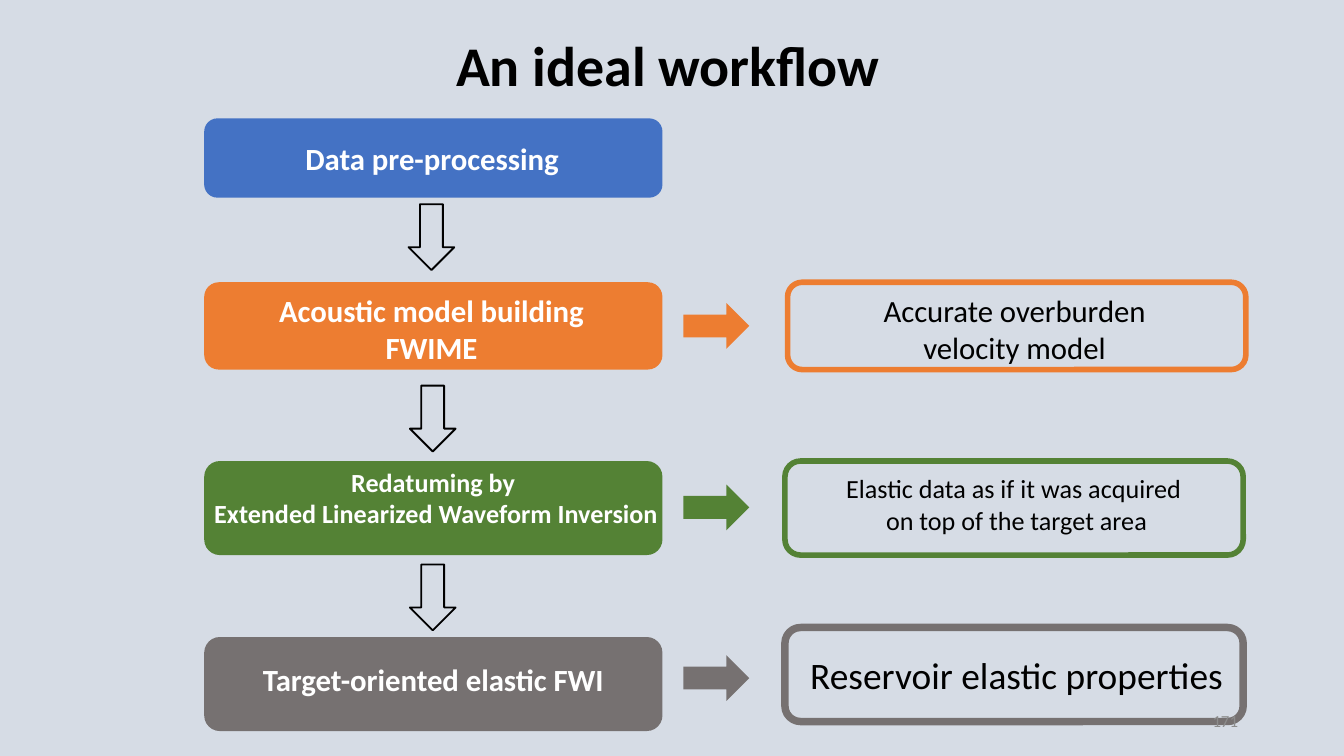
from pptx import Presentation
from pptx.dml.color import RGBColor
from pptx.enum import shapes, text
from pptx.util import Pt

BACKGROUND = RGBColor(0xD6, 0xDC, 0xE5)
BLACK = RGBColor(0, 0, 0)
WHITE = RGBColor(0xFF, 0xFF, 0xFF)
BLUE = RGBColor(0x44, 0x72, 0xC4)
ORANGE = RGBColor(0xED, 0x7D, 0x31)
GREEN = RGBColor(0x54, 0x82, 0x35)
GRAY = RGBColor(0x76, 0x71, 0x71)
NUMBER_GRAY = RGBColor(0x8C, 0x8C, 0x8C)

BOX_WIDTH = 245.5
STAGE_LEFT = 109.4
SIDE_ARROW_LEFT = 371.5
ARROW_WIDTH, ARROW_HEIGHT = 24.5, 35.3


class WorkflowSlide:
    font = "Calibri"

    def __init__(self, slide):
        self.slide = slide
        fill = slide.background.fill
        fill.solid()
        fill.fore_color.rgb = BACKGROUND

    def shape(self, kind, left, top, width, height, fill=None, line=None, weight=1):
        """Add a preset shape; a missing fill or line colour leaves that part empty."""
        shape = self.slide.shapes.add_shape(
            kind, Pt(left), Pt(top), Pt(width), Pt(height))
        shape.shadow.inherit = False
        if fill is None:
            shape.fill.background()
        else:
            shape.fill.solid()
            shape.fill.fore_color.rgb = fill
        if line is None:
            shape.line.fill.background()
        else:
            shape.line.color.rgb = line
            shape.line.width = Pt(weight)
        return shape

    def box(self, left, top, height, **style):
        return self.shape(shapes.MSO_SHAPE.ROUNDED_RECTANGLE,
                          left, top, BOX_WIDTH, height, **style)

    def arrow(self, left, top, rotation=0, **style):
        arrow = self.shape(shapes.MSO_SHAPE.DOWN_ARROW,
                           left, top, ARROW_WIDTH, ARROW_HEIGHT, **style)
        arrow.rotation = rotation

    def label(self, lines, left, top, width, height, size, color=BLACK, bold=False,
              align=text.PP_ALIGN.CENTER, anchor=text.MSO_ANCHOR.TOP):
        box = self.slide.shapes.add_textbox(Pt(left), Pt(top), Pt(width), Pt(height))
        frame = box.text_frame
        frame.word_wrap = True
        frame.vertical_anchor = anchor
        frame.text = lines
        for paragraph in frame.paragraphs:
            paragraph.alignment = align
            font = paragraph.font
            font.name, font.size, font.bold = self.font, Pt(size), bold
            font.color.rgb = color


# Box top, box height, colour; label, left, top, width, height, size
STAGES = [
    (63.4, 42.5, BLUE, ("Data pre-processing", 152.6, 71.3, 157.7, 27.4, 16.5)),
    (151.2, 46.8, ORANGE,
     ("Acoustic model building FWIME", 131.8, 152.6, 198.7, 47.5, 16.5)),
    (247, 50.4, GREEN,
     ("Redatuming by \nExtended Linearized Waveform Inversion",
      61.2, 246.2, 344.9, 41, 14)),
    (341.3, 50.4, GRAY,
     ("Target-oriented elastic FWI", 109.4, 350.6, 245.5, 27.4, 16.5)),
]

# Side arrow top; box left, top, height, colour, line weight; label as above
RESULTS = [
    (157, 421.9, 151.2, 46.8, ORANGE, 3,
     ("Accurate overburden velocity model", 444.2, 152.6, 198.7, 47.5, 16.5)),
    (254.2, 420.5, 247, 50.4, GREEN, 3,
     ("Elastic data as if it was acquired \von top of the target area",
      372.2, 249.8, 344.9, 41, 14)),
    (345.6, 420.5, 336.2, 50.4, GRAY, 4,
     ("Reservoir elastic properties", 372.2, 345.6, 344.9, 31.7, 20)),
]

STEP_ARROWS = [(218.9, 109.4), (219.6, 206.6), (219.6, 302.4)]


def main():
    deck = Presentation()
    deck.slide_width, deck.slide_height = Pt(720), Pt(405)
    workflow = WorkflowSlide(deck.slides.add_slide(deck.slide_layouts[6]))

    workflow.label("An ideal workflow", 183.6, 13, 348.5, 43.9, 30, bold=True)
    for top, height, color, label in STAGES:
        workflow.box(STAGE_LEFT, top, height, fill=color)
        workflow.label(*label, color=WHITE, bold=True)
    for left, top in STEP_ARROWS:
        workflow.arrow(left, top, line=BLACK)
    for arrow_top, left, top, height, color, weight, label in RESULTS:
        workflow.arrow(SIDE_ARROW_LEFT, arrow_top, rotation=270, fill=color)
        workflow.box(left, top, height, line=color, weight=weight)
        workflow.label(*label)
    workflow.label("171", 508.3, 375.1, 162, 21.6, 9, color=NUMBER_GRAY,
                   align=text.PP_ALIGN.RIGHT, anchor=text.MSO_ANCHOR.MIDDLE)

    deck.save("out.pptx")


if __name__ == "__main__":
    main()
